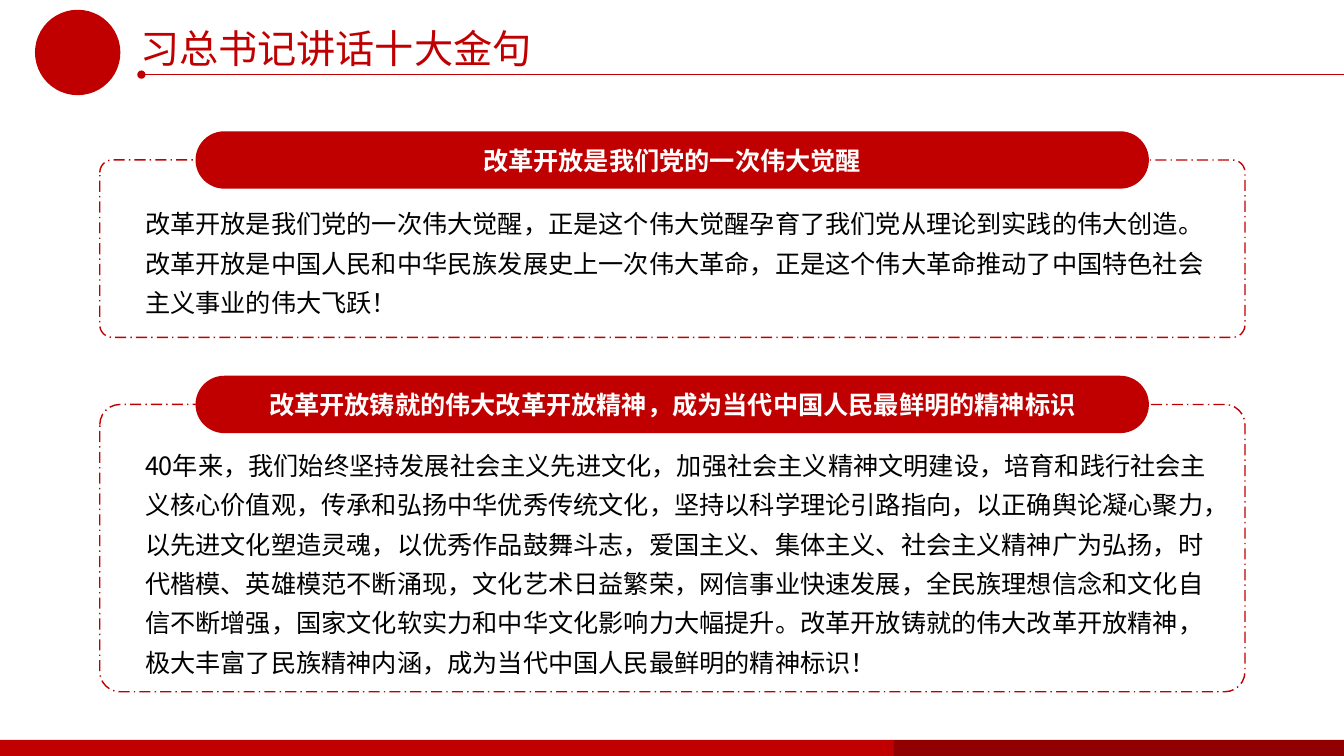
"""Build a slide of two titled quotation cards under a red heading."""
from lxml import etree
from pptx import Presentation
from pptx.dml.color import RGBColor
from pptx.enum import dml, shapes, text
from pptx.oxml import ns
from pptx.util import Pt

RED = RGBColor(0xC0, 0x00, 0x00)
DARK_RED = RGBColor(0x90, 0x00, 0x00)
WHITE = RGBColor(0xFF, 0xFF, 0xFF)
BLACK = RGBColor(0x00, 0x00, 0x00)
FONT = "Noto Sans CJK SC"
WIDTH, HEIGHT = 960, 540
BAR_TOP, BAR_SPLIT = 528.5, 638.5
FRAME_LEFT, FRAME_WIDTH = 71.3, 818
PILL_LEFT, PILL_WIDTH, PILL_HEIGHT = 139.7, 681, 41
BODY_LEFT, BODY_WIDTH = 96.5, 782

TITLE = "习总书记讲话十大金句"
CARDS = [
    {
        "top": 114.3, "height": 126.7, "body_top": 139, "body_height": 89.3,
        "heading": "改革开放是我们党的一次伟大觉醒",
        "body": "改革开放是我们党的一次伟大觉醒，正是这个伟大觉醒孕育了我们党从理论到实践的伟大创造。"
                "改革开放是中国人民和中华民族发展史上一次伟大革命，正是这个伟大革命推动了中国特色社会"
                "主义事业的伟大飞跃！",
    },
    {
        "top": 288.9, "height": 205.2, "body_top": 311.8, "body_height": 175,
        "heading": "改革开放铸就的伟大改革开放精神，成为当代中国人民最鲜明的精神标识",
        "body": "40年来，我们始终坚持发展社会主义先进文化，加强社会主义精神文明建设，培育和践行社会主"
                "义核心价值观，传承和弘扬中华优秀传统文化，坚持以科学理论引路指向，以正确舆论凝心聚力，"
                "以先进文化塑造灵魂，以优秀作品鼓舞斗志，爱国主义、集体主义、社会主义精神广为弘扬，时"
                "代楷模、英雄模范不断涌现，文化艺术日益繁荣，网信事业快速发展，全民族理想信念和文化自"
                "信不断增强，国家文化软实力和中华文化影响力大幅提升。改革开放铸就的伟大改革开放精神，"
                "极大丰富了民族精神内涵，成为当代中国人民最鲜明的精神标识！",
    },
]


def set_all(obj, values):
    """Set each named attribute of an object."""
    for name, value in values.items():
        setattr(obj, name, value)


def write(sp, content, size, color, bold=False, paragraph=None):
    """Put one formatted paragraph into a shape."""
    tf = sp.text_frame
    tf.word_wrap = True
    p = tf.paragraphs[0]
    set_all(p, paragraph or {})
    r = p.add_run()
    r.text = content
    set_all(r.font, {"size": Pt(size), "bold": bold, "name": FONT})
    r.font.color.rgb = color
    rpr = r.font._element
    rpr.set("lang", "zh-CN")
    etree.SubElement(rpr, ns.qn("a:ea"), typeface=FONT)


def add_box(s, kind, box, fill=None, radius=None):
    """Add a filled shape, or a dash-dot outline when no fill is given."""
    sp = s.shapes.add_shape(kind, *map(Pt, box))
    sp.shadow.inherit = False
    if radius is not None:
        sp.adjustments[0] = radius
    if fill is not None:
        sp.fill.solid()
        sp.fill.fore_color.rgb = fill
        sp.line.fill.background()
    else:
        sp.fill.background()
        sp.line.color.rgb = RED
        set_all(sp.line, {"width": Pt(1), "dash_style": dml.MSO_LINE.LONG_DASH_DOT})
    return sp


def add_text(s, box, *args, **kwargs):
    """Add a wrapping text box."""
    write(s.shapes.add_textbox(*map(Pt, box)), *args, **kwargs)


def add_rule(s, x1, x2, y):
    """Add a horizontal red line that starts with a dot."""
    line = s.shapes.add_connector(shapes.MSO_CONNECTOR.STRAIGHT, Pt(x1), Pt(y), Pt(x2), Pt(y))
    line.line.color.rgb = RED
    line.line.width = Pt(1)
    etree.SubElement(line.line._get_or_add_ln(), ns.qn("a:headEnd"), type="oval")
    etree.SubElement(line._element.spPr, ns.qn("a:effectLst"))


def add_card(s, card):
    """Add an outlined card with a heading pill on its top edge."""
    rounded = shapes.MSO_SHAPE.ROUNDED_RECTANGLE
    top = card["top"]
    add_box(s, rounded, (FRAME_LEFT, top, FRAME_WIDTH, card["height"]), radius=0.07)
    pill = add_box(s, rounded, (PILL_LEFT, top - PILL_HEIGHT / 2, PILL_WIDTH, PILL_HEIGHT),
                   RED, radius=0.5)
    write(pill, card["heading"], 18, WHITE, bold=True,
          paragraph={"alignment": text.PP_ALIGN.CENTER})
    add_text(s, (BODY_LEFT, card["body_top"], BODY_WIDTH, card["body_height"]),
             card["body"], 18, BLACK, paragraph={"line_spacing": 1.3})


def main():
    """Build and save the slide."""
    prs = Presentation()
    set_all(prs, {"slide_width": Pt(WIDTH), "slide_height": Pt(HEIGHT)})
    s = prs.slides.add_slide(prs.slide_layouts[6])
    add_rule(s, 101, WIDTH, 53.3)
    add_box(s, shapes.MSO_SHAPE.OVAL, (25, 7, 61, 61), RED)
    for left, right, color in ((0, BAR_SPLIT, RED), (BAR_SPLIT, WIDTH, DARK_RED)):
        add_box(s, shapes.MSO_SHAPE.RECTANGLE,
                (left, BAR_TOP, right - left, HEIGHT - BAR_TOP), color)
    add_text(s, (93, 13.7, 312, 41), TITLE, 28, RED)
    for card in CARDS:
        add_card(s, card)
    prs.save("out.pptx")


if __name__ == "__main__":
    main()
